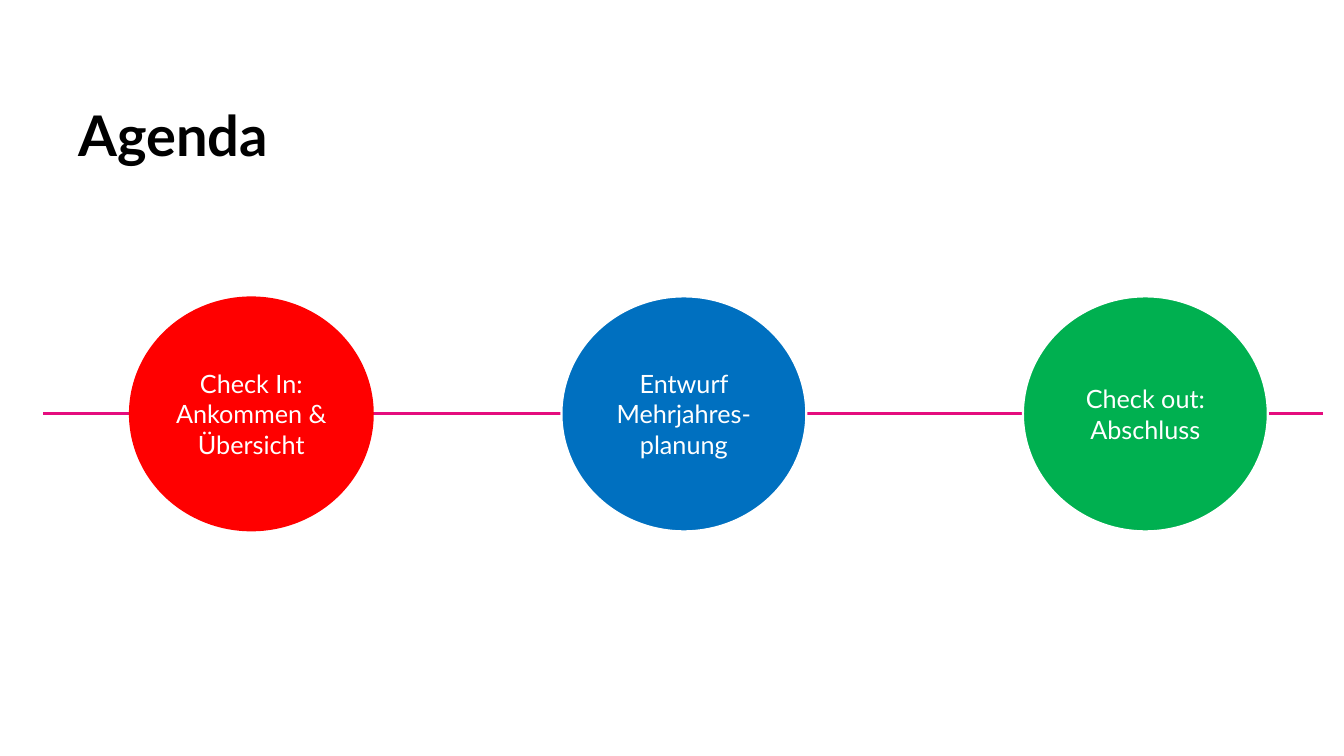
from dataclasses import dataclass

from lxml import etree
from pptx import Presentation
from pptx.dml.color import RGBColor
from pptx.enum.shapes import MSO_CONNECTOR, MSO_SHAPE
from pptx.enum.text import MSO_ANCHOR, PP_ALIGN
from pptx.oxml.ns import qn
from pptx.slide import Slide
from pptx.text.text import _Paragraph
from pptx.util import Cm, Pt

LINE = MSO_CONNECTOR.STRAIGHT
OVAL = MSO_SHAPE.OVAL
TOP, MIDDLE = MSO_ANCHOR.TOP, MSO_ANCHOR.MIDDLE
CENTER = PP_ALIGN.CENTER

FONT = "Lato"
COLORS = {
    "black": "000000",
    "white": "FFFFFF",
    "pink": "E50D7E",
    "red": "FF0000",
    "blue": "0070C0",
    "green": "00B050",
}
STEP_TOP, STEP_WIDTH, STEP_HEIGHT = 7.47, 6.17, 5.92
AXIS = 10.42


@dataclass
class Step:
    left: float
    text: str
    color: str
    rim: bool = True


STEPS = [
    Step(3.25, "Check In: Ankommen & Übersicht", "red", rim=False),
    Step(14.15, "Entwurf Mehrjahres-planung", "blue"),
    Step(25.78, "Check out: Abschluss", "green"),
]


def rgb(name: str) -> RGBColor:
    return RGBColor.from_string(COLORS[name])


def write(para: _Paragraph, text: str, size: int, color: str, bold: bool = False) -> None:
    para.text = text
    font = para.font
    font.name, font.size, font.bold = FONT, Pt(size), bold
    font.color.rgb = rgb(color)


def add_title(slide: Slide, text: str) -> None:
    box = slide.shapes.add_textbox(Cm(1.73), Cm(2.59), Cm(30.99), Cm(4.65))
    frame = box.text_frame
    frame.word_wrap = True
    frame.vertical_anchor = TOP
    para = frame.paragraphs[0]
    para.line_spacing = 0.9
    write(para, text, 40, "black", bold=True)


def add_axis(slide: Slide) -> None:
    axis = slide.shapes.add_connector(LINE, Cm(1.09), Cm(AXIS), Cm(33.35), Cm(AXIS))
    axis.line.color.rgb = rgb("pink")
    axis.line.width = Pt(2.25)
    etree.SubElement(axis._element.spPr, qn("a:effectLst"))


def add_step(slide: Slide, step: Step) -> None:
    oval = slide.shapes.add_shape(
        OVAL, Cm(step.left), Cm(STEP_TOP), Cm(STEP_WIDTH), Cm(STEP_HEIGHT)
    )
    oval.shadow.inherit = False
    oval.fill.solid()
    oval.fill.fore_color.rgb = rgb(step.color)
    if step.rim:
        oval.line.color.rgb = rgb("white")
        oval.line.width = Pt(1.5)
    else:
        oval.line.fill.background()
    frame = oval.text_frame
    frame.word_wrap = True
    frame.vertical_anchor = MIDDLE
    para = frame.paragraphs[0]
    para.alignment = CENTER
    write(para, step.text, 18, "white")


def main() -> None:
    deck = Presentation()
    deck.slide_width, deck.slide_height = Cm(33.87), Cm(19.05)
    slide = deck.slides.add_slide(deck.slide_layouts[6])

    # Heading
    add_title(slide, "Agenda")

    # Timeline with its steps on top
    add_axis(slide)
    for step in STEPS:
        add_step(slide, step)

    deck.save("out.pptx")


if __name__ == "__main__":
    main()
